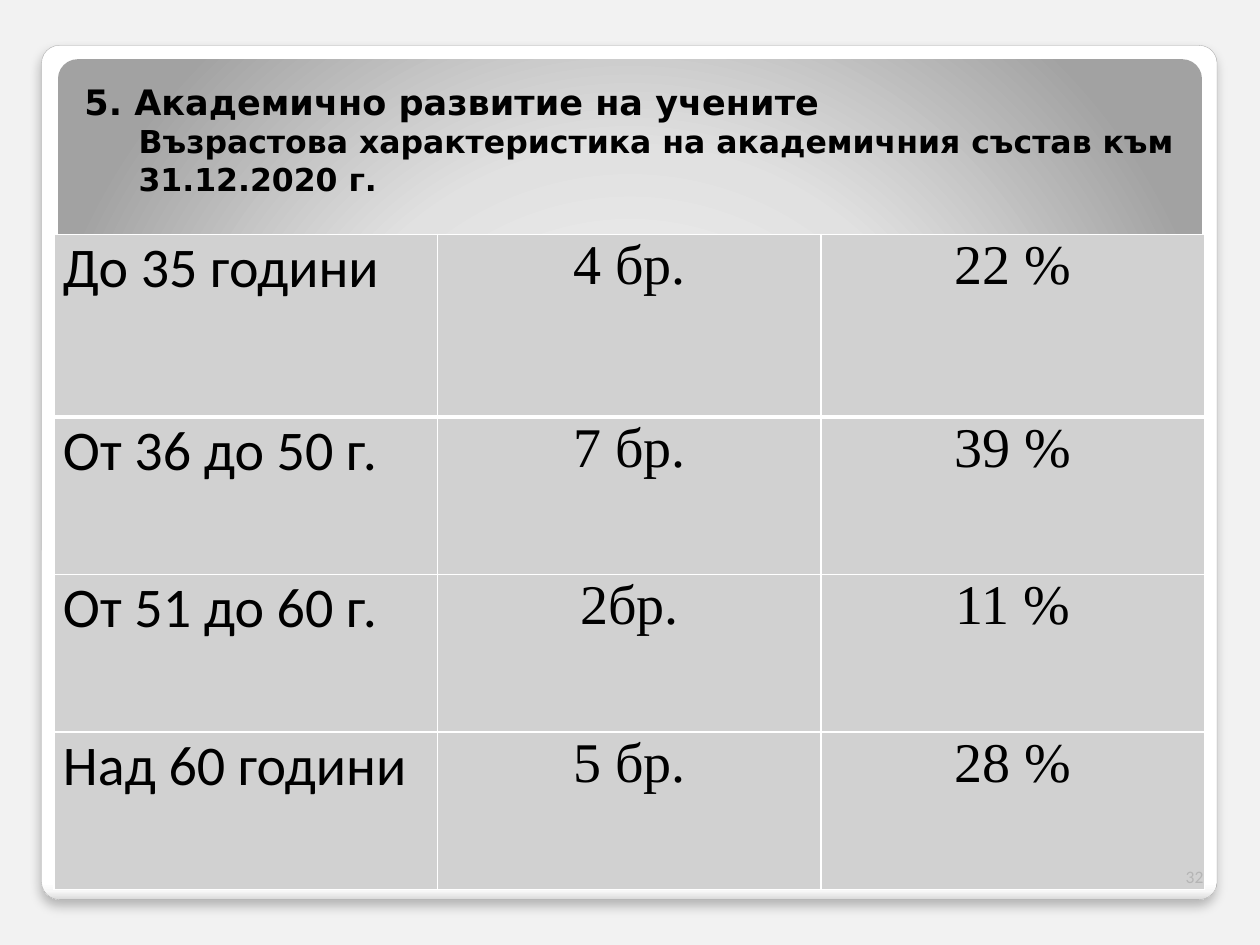
"""Builds a slide with a table of the age structure of the academic staff."""
from dataclasses import dataclass

from lxml.etree import SubElement
from pptx import Presentation
from pptx.dml.color import RGBColor
from pptx.enum.shapes import MSO_SHAPE as Shape
from pptx.enum.text import MSO_ANCHOR as Anchor, MSO_AUTO_SIZE as AutoSize, PP_ALIGN as Align
from pptx.oxml import parse_xml
from pptx.oxml.ns import nsdecls, qn
from pptx.util import Inches, Pt

TITLE = [("5. Академично развитие на учените", 20),
         ("Възрастова характеристика на академичния състав към 31.12.2020 г.", 18)]
AGES = [("До 35 години", "4 бр.", "22 %"),
        ("От 36 до 50 г.", "7 бр.", "39 %"),
        ("От 51 до 60 г.", "2бр.", "11 %"),
        ("Над 60 години", "5 бр.", "28 %")]
PAGE_NUMBER = "32"

WIDTH, HEIGHT = 10, 7.5
CARD_BOX = (0.33, 0.36, 9.33, 6.78)
PANEL_BOX = (0.46, 0.47, 9.08, 3.4)
TITLE_BOX = (0.51, 0.52, 9.15, 1.1)
TABLE_BOX = (0.43, 1.86, 9.13, 5.2)
NUMBER_BOX = (8.6, 6.83, 0.95, 0.25)
FIRST_ROW = 1.45


@dataclass(frozen=True)
class Theme:
    page: str = "F2F2F2"
    text: str = "000000"
    cell: str = "D1D1D1"
    border: str = "FFFFFF"
    outline: str = "A4A4A4"
    number: str = "B5B5B5"
    title_font: str = "DejaVu Sans"
    label_font: str = "Calibri"
    value_font: str = "Times New Roman"
    table_size: int = 32
    number_size: int = 10
    card: tuple = ((0, "FFFFFF"), (98, "FFFFFF"), (99, "F7F7F7"), (100, "DADADA"))
    panel: tuple = ((0, "FFFFFF"), (55, "E1E1E1"), (100, "A2A2A2"))


THEME = Theme()
DOWNWARD = '<a:lin ang="5400000" scaled="0"/>'
FROM_BELOW = ('<a:path path="circle"><a:fillToRect l="50000" t="175000" '
              'r="50000" b="-75000"/></a:path>')


def color(value):
    return RGBColor.from_string(value)


def inches(box):
    return [Inches(length) for length in box]


def write(para, text, font, size, tint=THEME.text, bold=False, align=Align.LEFT):
    para.alignment = align
    span = para.add_run()
    span.text = text
    span.font.name, span.font.size, span.font.bold = font, Pt(size), bold
    span.font.color.rgb = color(tint)


def add_rounded(page, box, radius, stops, direction):
    shape = page.shapes.add_shape(Shape.ROUNDED_RECTANGLE, *inches(box))
    shape.adjustments[0] = radius
    colors = "".join(f'<a:gs pos="{share * 1000}"><a:srgbClr val="{tint}"/></a:gs>'
                     for share, tint in stops)
    shape._element.spPr.insert(2, parse_xml(
        f'<a:gradFill {nsdecls("a")} rotWithShape="1">'
        f'<a:gsLst>{colors}</a:gsLst>{direction}</a:gradFill>'))
    shape.line.fill.background()
    shape.shadow.inherit = False
    return shape


def add_card(page):
    card = add_rounded(page, CARD_BOX, 0.021, THEME.card, DOWNWARD)
    card.line.color.rgb = color(THEME.outline)
    card.line.width = Pt(0.16)
    effects = card._element.spPr.find(qn("a:effectLst"))
    shadow = SubElement(effects, qn("a:outerShdw"), blurRad=str(Pt(6)), dist=str(Pt(4)),
                        dir="5400000", rotWithShape="0")
    black = SubElement(shadow, qn("a:srgbClr"), val="000000")
    SubElement(black, qn("a:alpha"), val="25000")


def set_borders(cell, **widths):
    properties = cell._tc.get_or_add_tcPr()
    for place, side in enumerate("LRTB"):
        properties.insert(place, parse_xml(
            f'<a:ln{side} {nsdecls("a")} w="{Pt(widths.get(side, 1))}"><a:solidFill>'
            f'<a:srgbClr val="{THEME.border}"/></a:solidFill></a:ln{side}>'))


def add_age_table(page):
    table = page.shapes.add_table(len(AGES), len(AGES[0]), *inches(TABLE_BOX)).table
    other_rows = (TABLE_BOX[3] - FIRST_ROW) / (len(AGES) - 1)
    for number, values in enumerate(AGES):
        table.rows[number].height = Inches(other_rows if number else FIRST_ROW)
        heavy = {0: {"B": 3}, 1: {"T": 3}}.get(number, {})
        for column, text in enumerate(values):
            cell = table.cell(number, column)
            cell.margin_left = cell.margin_right = Inches(0.07)
            cell.margin_top = cell.margin_bottom = 0
            cell.fill.solid()
            cell.fill.fore_color.rgb = color(THEME.cell)
            set_borders(cell, **heavy)
            write(cell.text_frame.paragraphs[0], text,
                  THEME.value_font if column else THEME.label_font, THEME.table_size,
                  align=Align.CENTER if column else Align.JUSTIFY)


def place_title(page):
    title = page.shapes.title
    title.left, title.top, title.width, title.height = inches(TITLE_BOX)
    page.shapes._spTree.append(title._element)
    frame = title.text_frame
    frame.word_wrap, frame.auto_size = True, AutoSize.NONE
    frame.vertical_anchor = Anchor.BOTTOM
    para = frame.paragraphs[0]
    for number, (text, size) in enumerate(TITLE):
        if number:
            para.add_line_break()
        write(para, text, THEME.title_font, size, bold=True)
    indents = para._p.get_or_add_pPr()
    indents.set("marL", str(Inches(0.49)))
    indents.set("indent", str(Inches(-0.43)))


def add_page_number(page):
    frame = page.shapes.add_textbox(*inches(NUMBER_BOX)).text_frame
    frame.word_wrap, frame.vertical_anchor = True, Anchor.MIDDLE
    frame.margin_left = frame.margin_right = frame.margin_top = frame.margin_bottom = 0
    write(frame.paragraphs[0], PAGE_NUMBER, THEME.label_font, THEME.number_size,
          tint=THEME.number, align=Align.RIGHT)


def main():
    deck = Presentation()
    deck.slide_width, deck.slide_height = Inches(WIDTH), Inches(HEIGHT)
    page = deck.slides.add_slide(deck.slide_layouts.get_by_name("Title Only"))
    page.background.fill.solid()
    page.background.fill.fore_color.rgb = color(THEME.page)
    add_card(page)
    add_rounded(page, PANEL_BOX, 0.046, THEME.panel, FROM_BELOW)
    add_age_table(page)
    place_title(page)
    add_page_number(page)
    deck.save("out.pptx")


if __name__ == "__main__":
    main()
